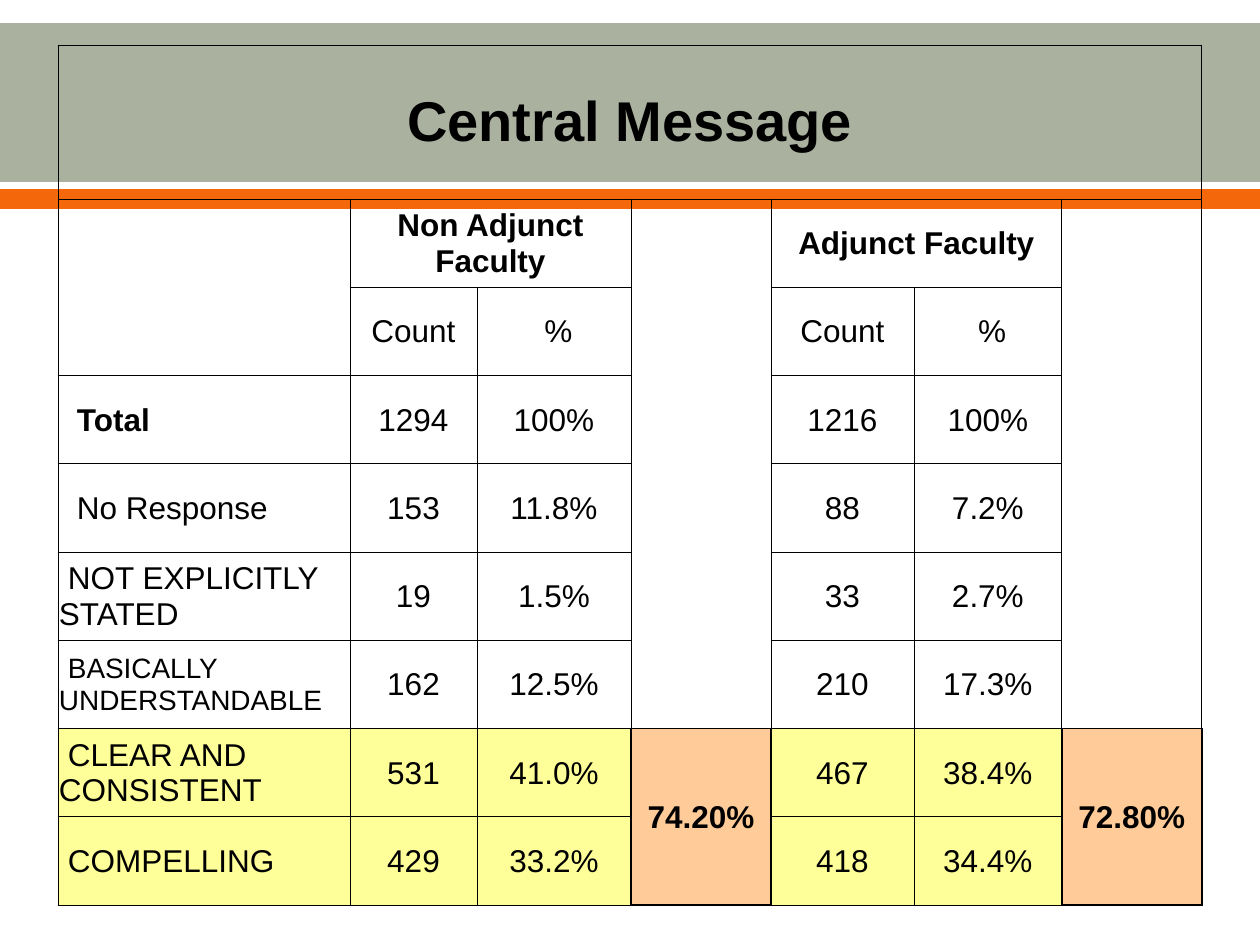
"""Build the Central Message table slide."""
from dataclasses import dataclass

from lxml import etree
from pptx import Presentation, util as u
from pptx.dml.color import RGBColor
from pptx.enum import shapes, text
from pptx.oxml import ns

TITLE = "Central Message"
HEADERS = [
    ["", "Non Adjunct Faculty", "", "", "Adjunct Faculty", "", ""],
    ["", "Count", " %", "", "Count", " %", ""],
]
RESULTS = [
    ["Total", "1294", "100%", "", "1216", "100%", ""],
    ["No Response", "153", "11.8%", "", "88", "7.2%", ""],
    ["NOT EXPLICITLY STATED", "19", "1.5%", "", "33", "2.7%", ""],
    ["BASICALLY UNDERSTANDABLE", "162", "12.5%", "", "210", "17.3%", ""],
    ["CLEAR AND CONSISTENT", "531", "41.0%", "74.20%", "467", "38.4%", "72.80%"],
    ["COMPELLING", "429", "33.2%", "", "418", "34.4%", ""],
]
ROWS = [[TITLE] + [""] * 6] + HEADERS + RESULTS
MERGES = [((0, 0), (0, 6)), ((1, 1), (1, 2)), ((1, 4), (1, 5)),
          ((7, 3), (8, 3)), ((7, 6), (8, 6))]
OPEN_ROWS = {0: range(1, 3), 3: range(1, 7), 6: range(1, 7)}
SUBTOTALS = [(row, column) for row in (7, 8) for column in (3, 6)]
BOLD = [(0, 0), (1, 1), (1, 4), (3, 0), (7, 3), (7, 6)]
SMALL = (6, 0)
INDENTS = {3: 18, 4: 18, 5: 9, 6: 9, 7: 9, 8: 9}

PAGE = (1260, 945)
BANDS = [((0, 23, 1260, 159), "sage"), ((0, 189, 1260, 20), "orange")]
TABLE_LEFT, TABLE_TOP = 58, 45
COLUMN_WIDTHS = [292, 127, 154, 140, 143, 148, 140]
TITLE_HEIGHT, BODY_HEIGHT = 154, 706
SIDES = {"lnL": (0, -1), "lnR": (0, 1), "lnT": (-1, 0), "lnB": (1, 0)}


@dataclass(frozen=True)
class Theme:
    font: str = "Arial"
    ink: str = "000000"
    sage: str = "ABB19F"
    orange: str = "F4680B"
    highlight: str = "FFFF99"
    subtotal: str = "FFCC99"
    title_size: int = 32
    body_size: int = 18
    small_size: int = 16
    thin: float = 0.5
    thick: float = 1


THEME = Theme()


def px(length):
    return u.Emu(round(length * 914400 / 126))


def color(value):
    return RGBColor.from_string(value)


def is_open(row, column):
    return row in OPEN_ROWS.get(column, ())


def add_band(page, bounds, fill):
    band = page.shapes.add_shape(shapes.MSO_SHAPE.RECTANGLE, *map(px, bounds))
    band.shadow.inherit = False
    band.fill.solid()
    band.fill.fore_color.rgb = color(fill)
    band.line.fill.background()


def draw_borders(cell, row, column):
    properties = cell._tc.get_or_add_tcPr()
    for index, (side, (down, across)) in enumerate(SIDES.items()):
        neighbour = (row + down, column + across)
        heavy = (row, column) in SUBTOTALS or neighbour in SUBTOTALS
        points = THEME.thick if heavy else THEME.thin
        line = etree.Element(ns.qn(f"a:{side}"), w=str(u.Pt(points)))
        if down and is_open(row, column) and is_open(*neighbour):
            etree.SubElement(line, ns.qn("a:noFill"))
        else:
            fill = etree.SubElement(line, ns.qn("a:solidFill"))
            etree.SubElement(fill, ns.qn("a:srgbClr"), val=THEME.ink)
        properties.insert(index, line)


def fill_cell(cell, row, column):
    if (row, column) in SUBTOTALS:
        cell.fill.solid()
        cell.fill.fore_color.rgb = color(THEME.subtotal)
    elif row >= 7:
        cell.fill.solid()
        cell.fill.fore_color.rgb = color(THEME.highlight)
    else:
        cell.fill.background()


def write_cell(cell, row, column, wording):
    cell.margin_left = cell.margin_right = cell.margin_top = px(1)
    cell.margin_bottom = 0
    cell.vertical_anchor = text.MSO_ANCHOR.MIDDLE
    if not wording:
        return
    cell.text_frame.text = wording
    para = cell.text_frame.paragraphs[0]
    if column == 0 and row in INDENTS:
        para.alignment = text.PP_ALIGN.LEFT
        properties = para._p.get_or_add_pPr()
        properties.set("marL", "0")
        properties.set("indent", str(px(INDENTS[row])))
    else:
        para.alignment = text.PP_ALIGN.CENTER
    size = THEME.title_size if row == 0 else THEME.body_size
    if (row, column) == SMALL:
        size = THEME.small_size
    for span in para.runs:
        span.font.name = THEME.font
        span.font.size = u.Pt(size)
        span.font.bold = (row, column) in BOLD
        span.font.color.rgb = color(THEME.ink)


def add_results_table(page):
    frame = page.shapes.add_table(
        len(ROWS), len(COLUMN_WIDTHS), px(TABLE_LEFT), px(TABLE_TOP),
        px(sum(COLUMN_WIDTHS)), px(TITLE_HEIGHT + BODY_HEIGHT))
    table = frame.table
    table.first_row = table.horz_banding = False
    for column, width in zip(table.columns, COLUMN_WIDTHS):
        column.width = px(width)
    body_row = BODY_HEIGHT / (len(ROWS) - 1)
    for index, row in enumerate(table.rows):
        row.height = px(body_row if index else TITLE_HEIGHT)
    for start, end in MERGES:
        table.cell(*start).merge(table.cell(*end))
    for row, wordings in enumerate(ROWS):
        for column, wording in enumerate(wordings):
            cell = table.cell(row, column)
            write_cell(cell, row, column, wording)
            fill_cell(cell, row, column)
            draw_borders(cell, row, column)


def main():
    deck = Presentation()
    deck.slide_width, deck.slide_height = map(px, PAGE)
    page = deck.slides.add_slide(deck.slide_layouts[6])
    for bounds, name in BANDS:
        add_band(page, bounds, getattr(THEME, name))
    add_results_table(page)
    deck.save("out.pptx")


if __name__ == "__main__":
    main()
